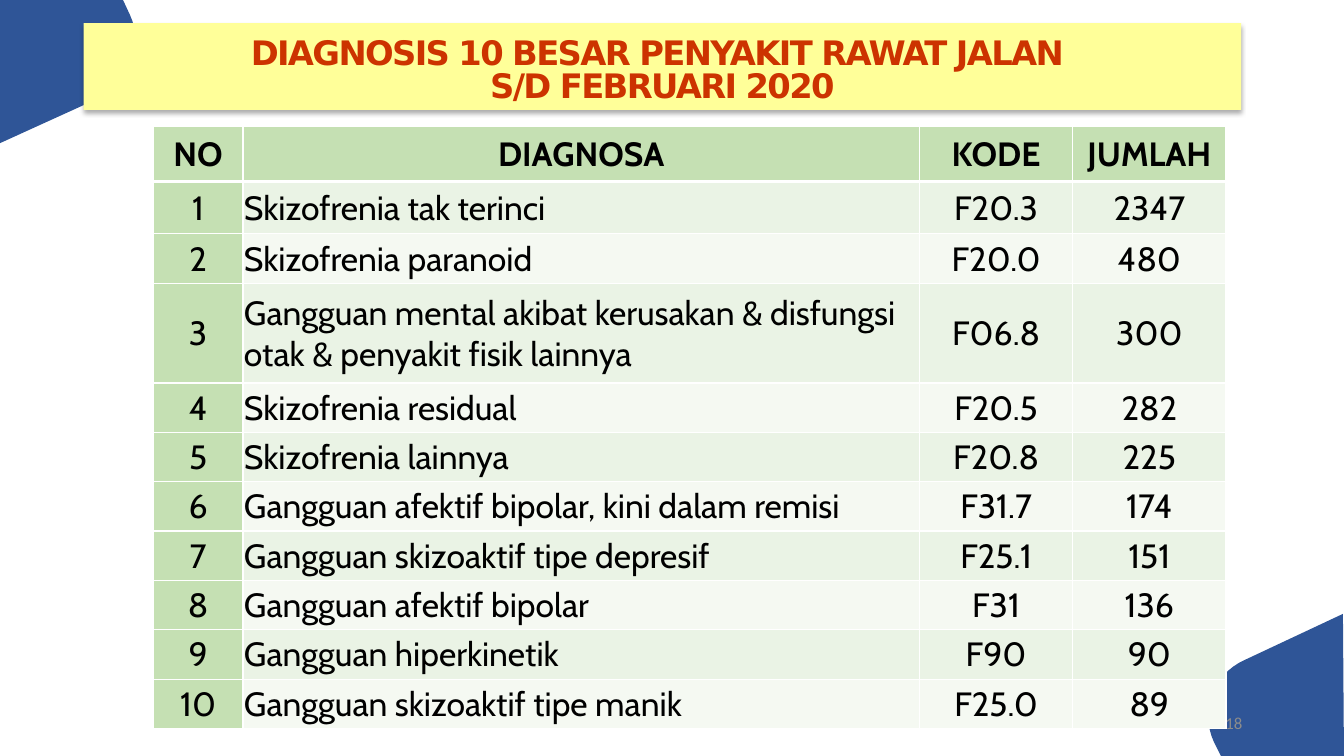
from dataclasses import dataclass

from lxml import etree
from pptx import Presentation
from pptx.dml.color import RGBColor
from pptx.enum.shapes import MSO_SHAPE
from pptx.enum.text import MSO_ANCHOR, PP_ALIGN
from pptx.oxml import parse_xml
from pptx.oxml.ns import nsdecls, qn
from pptx.util import Inches, Pt

RECTANGLE = MSO_SHAPE.RECTANGLE
LEFT, CENTER, RIGHT = PP_ALIGN.LEFT, PP_ALIGN.CENTER, PP_ALIGN.RIGHT
MIDDLE, BOTTOM = MSO_ANCHOR.MIDDLE, MSO_ANCHOR.BOTTOM


@dataclass(frozen=True)
class Theme:
    corner: str = "2F5597"
    banner: str = "FFFF99"
    title: str = "CC3300"
    number: str = "8C8C8C"
    text: str = "000000"
    border: str = "FFFFFF"
    header: str = "C5E0B3"
    bands: tuple = ("EAF3E5", "F5F9F2")
    title_font: str = "DejaVu Sans"
    table_font: str = "Cabin"
    number_font: str = "Calibri"
    title_size: float = 24.1
    table_size: float = 24
    number_size: float = 12


THEME = Theme()

TITLE_LINES = ["DIAGNOSIS 10 BESAR PENYAKIT RAWAT JALAN ", "S/D FEBRUARI 2020"]
HEADINGS = ["NO", "DIAGNOSA", "KODE", "JUMLAH"]
DIAGNOSES = [
    ("Skizofrenia tak terinci", "F20.3", 2347),
    ("Skizofrenia paranoid", "F20.0", 480),
    ("Gangguan mental akibat kerusakan & disfungsi otak & penyakit fisik lainnya", "F06.8", 300),
    ("Skizofrenia residual", "F20.5", 282),
    ("Skizofrenia lainnya", "F20.8", 225),
    ("Gangguan afektif bipolar, kini dalam remisi", "F31.7", 174),
    ("Gangguan skizoaktif tipe depresif", "F25.1", 151),
    ("Gangguan afektif bipolar", "F31", 136),
    ("Gangguan hiperkinetik", "F90", 90),
    ("Gangguan skizoaktif tipe manik", "F25.0", 89),
]
COLUMN_WIDTHS = [0.89, 6.71, 1.52, 1.52]
ROW_HEIGHTS = [0.55, 0.52, 0.49, 0.99] + [0.49] * 7

TOP_LEFT_CORNER = (
    [(0, 0), (1.22, 0)],
    [(1.29, 0.15), (1.43, 0.46), (1.29, 0.83), (0.99, 0.97)],
    [(0, 1.42)],
)
BOTTOM_RIGHT_CORNER = (
    [(13.33, 7.5), (12.11, 7.5)],
    [(12.04, 7.36), (11.9, 7.06), (12.03, 6.69), (12.34, 6.55)],
    [(13.32, 6.09)],
)


def paint(fill, color):
    fill.solid()
    fill.fore_color.rgb = RGBColor.from_string(color)


def add_run(paragraph, text, font, size, color, bold=False):
    run = paragraph.add_run()
    run.text = text
    run.font.name = font
    run.font.size = Pt(size)
    run.font.bold = bold
    run.font.color.rgb = RGBColor.from_string(color)
    return run


def bezier(controls, steps=16):
    points = []
    for step in range(steps + 1):
        t = step / steps
        weights = ((1 - t) ** 3, 3 * t * (1 - t) ** 2, 3 * t**2 * (1 - t), t**3)
        points.append(tuple(
            sum(weight * point[axis] for weight, point in zip(weights, controls))
            for axis in (0, 1)
        ))
    return points


def add_corner(slide, before, curve, after):
    points = before + bezier(curve) + after
    outline = [(Inches(x), Inches(y)) for x, y in points]
    builder = slide.shapes.build_freeform(*outline[0], scale=1.0)
    builder.add_line_segments(outline[1:], close=True)
    shape = builder.convert_to_shape()
    shape.shadow.inherit = False
    paint(shape.fill, THEME.corner)
    shape.line.fill.background()


def add_banner(slide):
    shape = slide.shapes.add_shape(
        RECTANGLE, Inches(0.83), Inches(0.23), Inches(11.48), Inches(0.86)
    )
    shape.shadow.inherit = False
    paint(shape.fill, THEME.banner)
    shape.line.fill.background()
    effects = shape._element.spPr.find(qn("a:effectLst"))
    effects.append(parse_xml(
        f'<a:outerShdw {nsdecls("a")} blurRad="{Pt(3.5)}" dist="{Pt(2.2)}" dir="5400000" '
        'algn="t" rotWithShape="0"><a:srgbClr val="000000"><a:alpha val="32000"/>'
        "</a:srgbClr></a:outerShdw>"
    ))
    frame = shape.text_frame
    frame.word_wrap = True
    frame.vertical_anchor = BOTTOM
    paragraph = frame.paragraphs[0]
    paragraph.alignment = CENTER
    paragraph.line_spacing = 0.8
    for index, line in enumerate(TITLE_LINES):
        if index:
            paragraph.add_line_break()
        run = add_run(paragraph, line, THEME.title_font, THEME.title_size, THEME.title, True)
        run.font._element.set("spc", "-120")


def add_slide_number(slide, number):
    box = slide.shapes.add_textbox(Inches(9.42), Inches(6.97), Inches(3), Inches(0.4))
    frame = box.text_frame
    frame.word_wrap = True
    frame.vertical_anchor = MIDDLE
    paragraph = frame.paragraphs[0]
    paragraph.alignment = RIGHT
    add_run(paragraph, number, THEME.number_font, THEME.number_size, THEME.number)


def set_borders(cell, top, bottom):
    properties = cell._tc.get_or_add_tcPr()
    for side, width in (("lnL", 1), ("lnR", 1), ("lnT", top), ("lnB", bottom)):
        line = etree.SubElement(properties, qn(f"a:{side}"), w=str(Pt(width)))
        fill = etree.SubElement(line, qn("a:solidFill"))
        etree.SubElement(fill, qn("a:srgbClr"), val=THEME.border)


def fill_cell(cell, text, row, column):
    is_header = row == 0
    set_borders(cell, top=3 if row == 1 else 1, bottom=3 if is_header else 1)
    is_green = is_header or column == 0
    paint(cell.fill, THEME.header if is_green else THEME.bands[(row - 1) % 2])
    cell.margin_left = cell.margin_right = cell.margin_top = Inches(0.01)
    cell.margin_bottom = 0
    cell.vertical_anchor = MIDDLE
    paragraph = cell.text_frame.paragraphs[0]
    paragraph.alignment = LEFT if column == 1 and not is_header else CENTER
    add_run(paragraph, text, THEME.table_font, THEME.table_size, THEME.text, is_header)


def add_diagnosis_table(slide):
    rows = [HEADINGS] + [(number, *entry) for number, entry in enumerate(DIAGNOSES, 1)]
    table = slide.shapes.add_table(
        len(rows), len(HEADINGS), Inches(1.52), Inches(1.25),
        Inches(sum(COLUMN_WIDTHS)), Inches(sum(ROW_HEIGHTS)),
    ).table
    for column, width in zip(table.columns, COLUMN_WIDTHS):
        column.width = Inches(width)
    for row, height in zip(table.rows, ROW_HEIGHTS):
        row.height = Inches(height)
    for row_index, values in enumerate(rows):
        for column_index, value in enumerate(values):
            cell = table.cell(row_index, column_index)
            fill_cell(cell, str(value), row_index, column_index)


def main():
    presentation = Presentation()
    presentation.slide_width = Inches(13.33)
    presentation.slide_height = Inches(7.5)
    slide = presentation.slides.add_slide(presentation.slide_layouts[6])
    for corner in (BOTTOM_RIGHT_CORNER, TOP_LEFT_CORNER):
        add_corner(slide, *corner)
    add_banner(slide)
    add_slide_number(slide, "18")
    add_diagnosis_table(slide)
    presentation.save("out.pptx")


if __name__ == "__main__":
    main()
